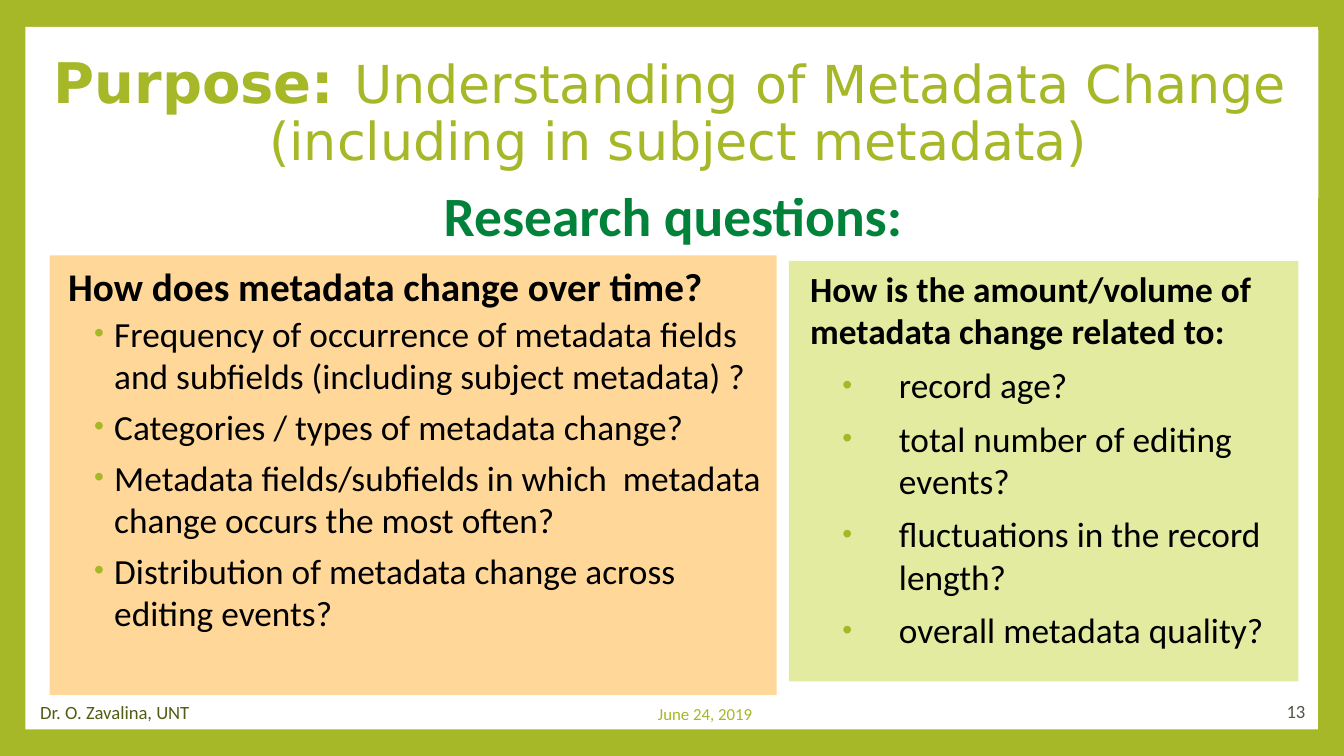
"""Build the slide on research questions about metadata change."""
from lxml.etree import SubElement
from pptx import Presentation
from pptx.dml.color import RGBColor
from pptx.enum.shapes import MSO_SHAPE
from pptx.enum.text import MSO_ANCHOR, MSO_AUTO_SIZE, PP_ALIGN
from pptx.oxml.ns import qn
from pptx.util import Cm, Pt

LIME = RGBColor(0xA6, 0xB7, 0x27)
GREEN = RGBColor(0x00, 0x82, 0x3B)
OLIVE = RGBColor(0x53, 0x5C, 0x14)
GREY = RGBColor(0x56, 0x53, 0x49)
ORANGE = RGBColor(0xFF, 0xD8, 0x99)
PALE = RGBColor(0xE2, 0xEB, 0xA0)
WHITE = RGBColor(0xFF, 0xFF, 0xFF)
BLACK = RGBColor(0, 0, 0)

HEADING = "Research questions:"
PURPOSE = [
    ("Purpose: ", {"size": Pt(30), "bold": True}),
    ("Understanding of Metadata Change ", {"size": Pt(28), "bold": False}),
    ("(including in subject metadata)", {"size": Pt(28), "bold": False}),
]
QUESTIONS = [
    {
        "box": (0.94, 4.83, 13.74, 8.31), "fill": ORANGE,
        "lead": "How does metadata change over time?",
        "lead_size": 21, "lead_margin": 0.1, "lead_before": 10.5,
        "margin": 0.97, "hang": 0.38, "before": 1.5, "after": 3,
        "items": [
            "Frequency of occurrence of metadata fields and subfields (including subject metadata) ?",
            "Categories / types of metadata change?",
            "Metadata fields/subfields in which  metadata change occurs the most often?",
            "Distribution of metadata change across editing events?",
        ],
    },
    {
        "box": (14.91, 4.93, 9.63, 7.95), "fill": PALE,
        "lead": "How is the amount/volume of metadata change related to:",
        "lead_size": 18.9, "lead_margin": 0.15, "lead_before": 9,
        "margin": 1.83, "hang": 1.07, "before": 6, "after": 0,
        "items": [
            "record age?",
            "total number of editing events?",
            "fluctuations in the record length?",
            "overall metadata quality?",
        ],
    },
]
FOOTERS = [
    ("13", (21.36, 13.06, 3.56, 0.76), PP_ALIGN.RIGHT, MSO_ANCHOR.MIDDLE, 10, GREY),
    ("June 24, 2019", (8.41, 13.11, 9.83, 0.76), PP_ALIGN.CENTER, MSO_ANCHOR.MIDDLE, 9, LIME),
    ("Dr. O. Zavalina, UNT", (0.51, 13.13, 3.61, 0.76), PP_ALIGN.LEFT, MSO_ANCHOR.TOP, 10, OLIVE),
]


def apply(obj, values):
    for name, value in values.items():
        setattr(obj, name, value)


def add_run(p, text, color, name="Calibri", **font):
    r = p.add_run()
    r.text = text
    apply(r.font, {"name": name, **font})
    r.font.color.rgb = color


def add_block(s, box, fill, anchor=MSO_ANCHOR.TOP):
    sp = s.shapes.add_shape(MSO_SHAPE.RECTANGLE, *map(Cm, box))
    sp.shadow.inherit = False
    sp.fill.solid()
    sp.fill.fore_color.rgb = fill
    sp.line.fill.background()
    apply(sp.text_frame, {"word_wrap": True, "vertical_anchor": anchor})
    return sp


def set_bullet(p, margin, hang):
    pPr = p._p.get_or_add_pPr()
    pPr.set("marL", str(Cm(margin)))
    pPr.set("indent", str(-Cm(hang)))
    if hang:
        color = SubElement(pPr, qn("a:buClr"))
        SubElement(color, qn("a:srgbClr"), val=str(LIME))
        SubElement(pPr, qn("a:buSzPct"), val="80000")
        SubElement(pPr, qn("a:buFont"), typeface="Arial")
        SubElement(pPr, qn("a:buChar"), char="•")


def add_questions(s, q):
    tf = add_block(s, q["box"], q["fill"]).text_frame
    p = tf.paragraphs[0]
    apply(p, {"alignment": PP_ALIGN.LEFT, "space_before": Pt(q["lead_before"])})
    set_bullet(p, q["lead_margin"], 0)
    add_run(p, q["lead"], BLACK, size=Pt(q["lead_size"]), bold=True)
    for item in q["items"]:
        p = tf.add_paragraph()
        apply(p, {"level": 1, "alignment": PP_ALIGN.LEFT,
                  "space_before": Pt(q["before"]), "space_after": Pt(q["after"])})
        set_bullet(p, q["margin"], q["hang"])
        add_run(p, item, BLACK, size=Pt(18.9), bold=False)


def add_heading(s):
    sp = s.shapes.title
    apply(sp, dict(zip(("left", "top", "width", "height"), map(Cm, (2.44, 3.56, 20.57, 1.14)))))
    tf = sp.text_frame
    apply(tf, {"word_wrap": True, "auto_size": MSO_AUTO_SIZE.NONE,
               "vertical_anchor": MSO_ANCHOR.MIDDLE})
    p = tf.paragraphs[0]
    apply(p, {"alignment": PP_ALIGN.CENTER, "line_spacing": 0.9})
    add_run(p, HEADING, GREEN, size=Pt(29.7), bold=True)


def add_purpose(s):
    sp = add_block(s, (0.71, 0.56, 24.21, 3.18), WHITE, MSO_ANCHOR.MIDDLE)
    p = sp.text_frame.paragraphs[0]
    apply(p, {"alignment": PP_ALIGN.CENTER, "line_spacing": 0.9})
    for i, (text, font) in enumerate(PURPOSE):
        if i == 2:
            p.add_line_break()
        add_run(p, text, LIME, name="DejaVu Sans", **font)


def add_footer(s, text, box, align, anchor, size, color):
    tf = s.shapes.add_textbox(*map(Cm, box)).text_frame
    apply(tf, {"word_wrap": True, "vertical_anchor": anchor})
    p = tf.paragraphs[0]
    p.alignment = align
    add_run(p, text, color, size=Pt(size))


def main():
    prs = Presentation()
    apply(prs, {"slide_width": Cm(25.4), "slide_height": Cm(14.29)})
    s = prs.slides.add_slide(prs.slide_layouts[5])
    s.background.fill.solid()
    s.background.fill.fore_color.rgb = LIME
    panel = add_block(s, (0.48, 0.51, 24.43, 13.28), WHITE)
    s.shapes.title.element.addprevious(panel.element)
    add_heading(s)
    for q in QUESTIONS:
        add_questions(s, q)
    add_purpose(s)
    for footer in FOOTERS:
        add_footer(s, *footer)
    prs.save("out.pptx")


if __name__ == "__main__":
    main()
